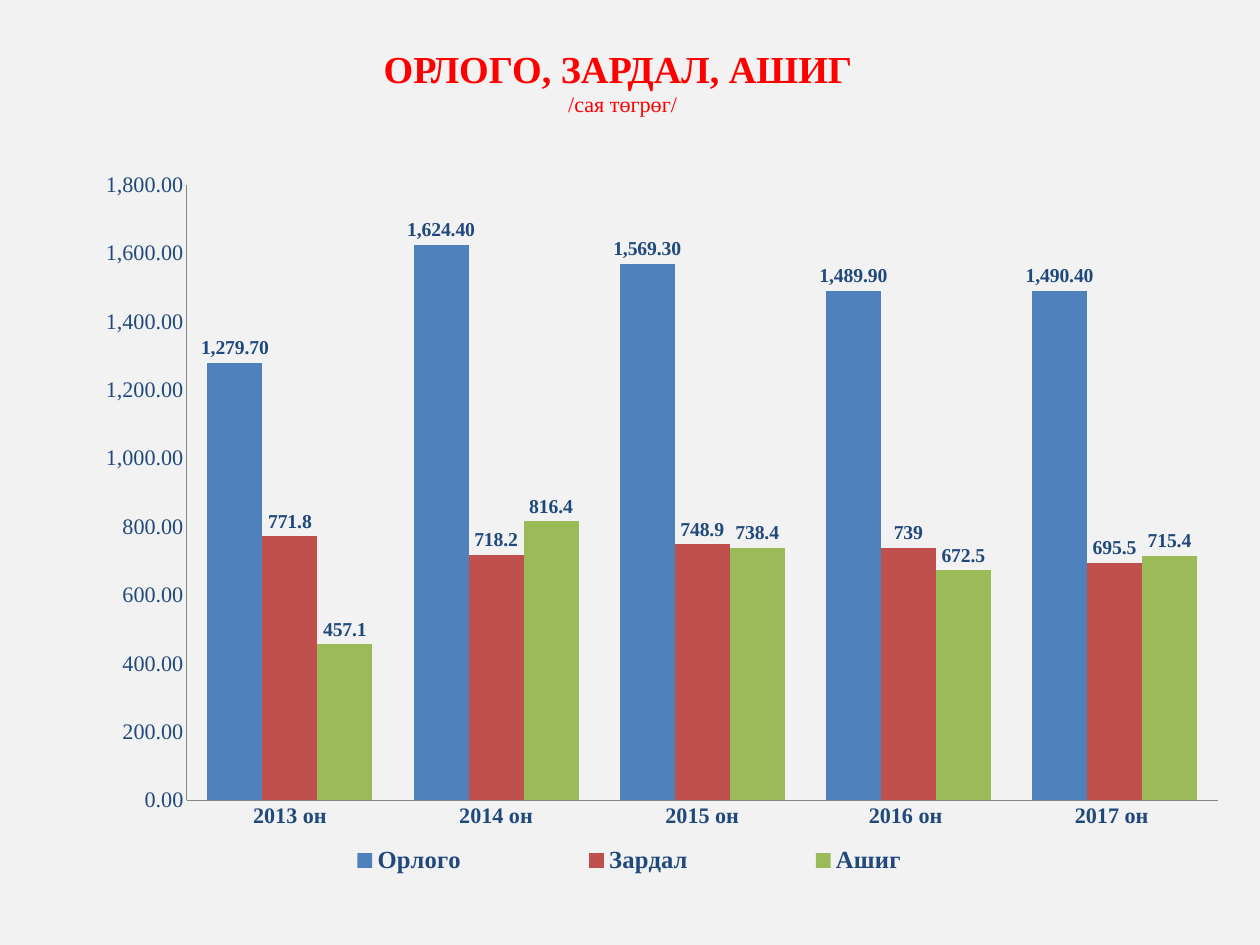
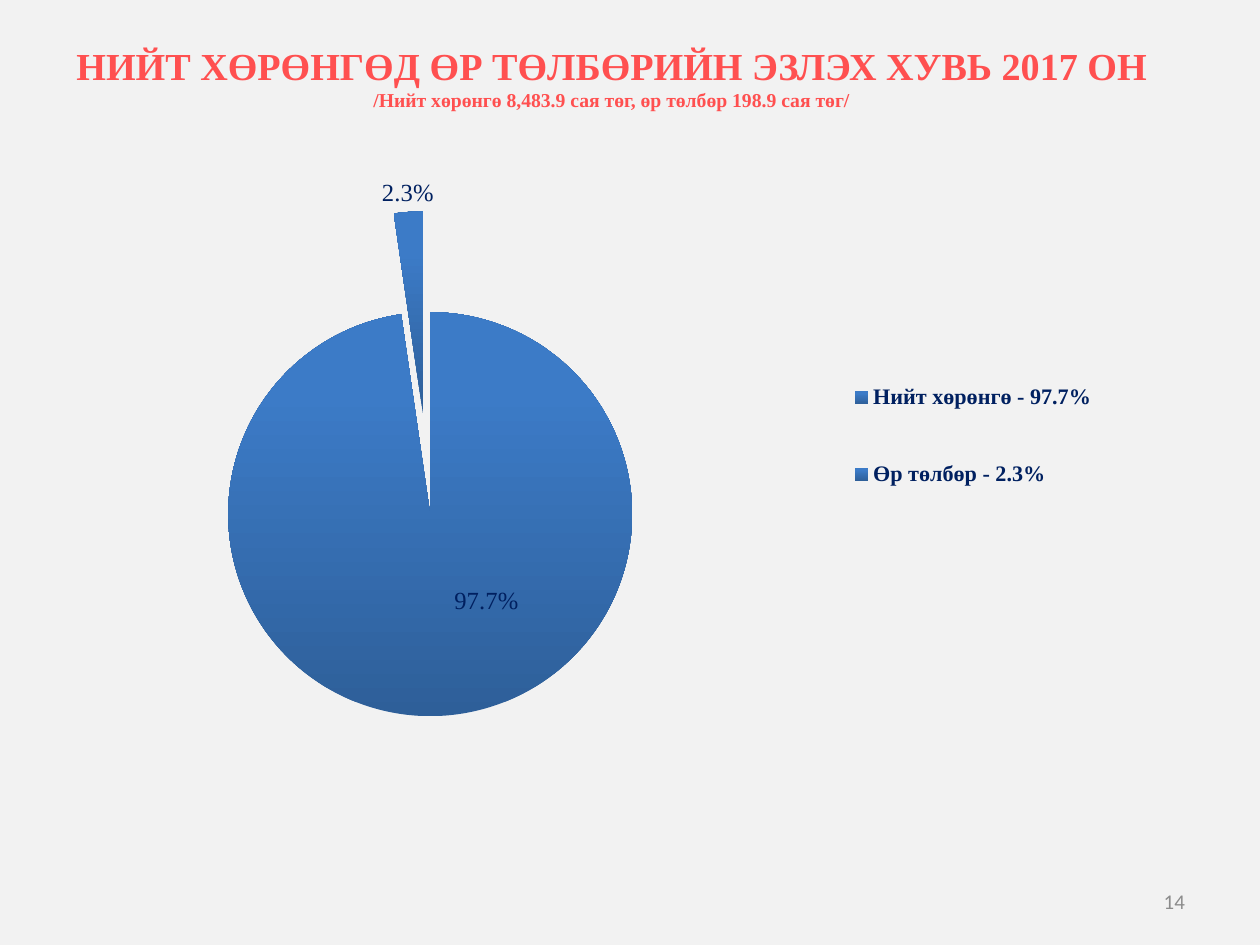
from lxml import etree
from pptx import Presentation
from pptx.chart.data import CategoryChartData
from pptx.dml.color import RGBColor
from pptx.enum.chart import (XL_CHART_TYPE, XL_LABEL_POSITION,
                             XL_LEGEND_POSITION, XL_TICK_MARK)
from pptx.enum.text import MSO_ANCHOR, PP_ALIGN
from pptx.oxml.ns import qn
from pptx.util import Pt

COLUMN, PIE = XL_CHART_TYPE.COLUMN_CLUSTERED, XL_CHART_TYPE.PIE
CENTER, OUTSIDE = XL_LABEL_POSITION.CENTER, XL_LABEL_POSITION.OUTSIDE_END
BOTTOM, RIGHT = XL_LEGEND_POSITION.BOTTOM, XL_LEGEND_POSITION.RIGHT
NO_TICK = XL_TICK_MARK.NONE
MIDDLE = MSO_ANCHOR.MIDDLE
MID, END = PP_ALIGN.CENTER, PP_ALIGN.RIGHT

PAPER = RGBColor(0xF2, 0xF2, 0xF2)
RED = RGBColor(0xFF, 0x00, 0x00)
CORAL = RGBColor(0xFF, 0x50, 0x50)
GRAY = RGBColor(0x8C, 0x8C, 0x8C)
AXIS = RGBColor(0x86, 0x86, 0x86)
INK = RGBColor(0x1F, 0x49, 0x7D)
NAVY = RGBColor(0x00, 0x20, 0x60)
BLUE = RGBColor(0x4F, 0x81, 0xBD)
BRICK = RGBColor(0xC0, 0x50, 0x4D)
GREEN = RGBColor(0x9B, 0xBB, 0x59)
DEEP = RGBColor(0x2E, 0x5F, 0x99)
BRIGHT = RGBColor(0x3C, 0x7B, 0xC7)

SERIF, SANS = "Times New Roman", "Calibri"
MONEY = "#,##0.00"

YEARS = ["2013 он", "2014 он", "2015 он", "2016 он ", "2017 он "]
SUMS = [
    ("Орлого", [1279.7, 1624.4, 1569.3, 1489.9, 1490.4], BLUE, MONEY),
    ("Зардал", [771.8, 718.2, 748.9, 739, 695.5], BRICK, "General"),
    ("Ашиг", [457.1, 816.4, 738.4, 672.5, 715.4], GREEN, "General"),
]
SHARES = {"Нийт хөрөнгө - 97.7%": 0.977, "Өр төлбөр - 2.3%": 0.023}


def style(font, color, size, bold=False, name=SERIF):
    font.color.rgb = color
    look = {"size": Pt(size), "bold": bold, "name": name}
    for key, value in look.items():
        setattr(font, key, value)


def add_text(slide, box, lines, color, align=MID, name=SERIF):
    """Fill a text box with lines of (text, size, bold)."""
    frame = slide.shapes.add_textbox(*map(Pt, box)).text_frame
    look = {"word_wrap": True, "vertical_anchor": MIDDLE,
            "margin_left": Pt(10), "margin_right": Pt(10),
            "margin_top": Pt(5), "margin_bottom": Pt(5)}
    for key, value in look.items():
        setattr(frame, key, value)
    for i, (text, size, bold) in enumerate(lines):
        para = frame.add_paragraph() if i else frame.paragraphs[0]
        para.alignment = align
        run = para.add_run()
        run.text = text
        style(run.font, color, size, bold, name)


def add_slide(deck):
    slide = deck.slides.add_slide(deck.slide_layouts[6])
    fill = slide.background.fill
    fill.solid()
    fill.fore_color.rgb = PAPER
    return slide


def set_layout(host, before, **values):
    """Give a chart part a manual layout, placed ahead of the named child."""
    for old in host.findall(qn("c:layout")):
        host.remove(old)
    layout = etree.Element(qn("c:layout"))
    manual = etree.SubElement(layout, qn("c:manualLayout"))
    for tag, value in values.items():
        etree.SubElement(manual, qn("c:" + tag)).set("val", str(value))
    host.find(qn("c:" + before)).addprevious(layout)


def frame_layout(x, y, w, h):
    return dict(xMode="edge", yMode="edge", x=x, y=y, w=w, h=h)


def add_chart(slide, kind, box, data, plot, key, spot, color, size):
    """Add a chart with plot and legend boxes given as shares of it."""
    chart = slide.shapes.add_chart(kind, *map(Pt, box), data).chart
    chart.has_title = False
    style(chart.font, color, 18)
    chart.has_legend = True
    legend = chart.legend
    legend.position = spot
    legend.include_in_layout = False
    style(legend.font, color, size, True)
    area = chart.plots[0]._element
    set_layout(area.getparent(), etree.QName(area).localname,
               layoutTarget="inner", **frame_layout(*plot))
    set_layout(legend._element, "overlay", **frame_layout(*key))
    return chart


def add_bars(slide, box):
    data = CategoryChartData()
    data.categories = YEARS
    for name, values, _, form in SUMS:
        data.add_series(name, values, form)
    chart = add_chart(slide, COLUMN, box, data, (0.096, 0.031, 0.895, 0.851),
                      (0.14, 0.93, 0.68, 0.07), BOTTOM, INK, 20)
    plot = chart.plots[0]
    plot.gap_width, plot.overlap = 75, 0
    plot.vary_by_categories = False
    for axis, bold in ((chart.category_axis, True), (chart.value_axis, False)):
        axis.has_major_gridlines = False
        axis.major_tick_mark = axis.minor_tick_mark = NO_TICK
        axis.format.line.color.rgb = AXIS
        style(axis.tick_labels.font, INK, 18, bold)
    marks = chart.value_axis.tick_labels
    marks.number_format, marks.number_format_is_linked = MONEY, False
    for series, (_, _, color, form) in zip(plot.series, SUMS):
        series.format.fill.solid()
        series.format.fill.fore_color.rgb = color
        series.invert_if_negative = False
        labels = series.data_labels
        labels.show_value = True
        labels.position = OUTSIDE
        labels.number_format, labels.number_format_is_linked = form, False
        style(labels.font, INK, 16, True)


def shade(point):
    fill = point.format.fill
    fill.gradient()
    fill.gradient_angle = 90
    for stop, color, place in zip(fill.gradient_stops, (DEEP, BRIGHT), (0, 0.8)):
        stop.color.rgb, stop.position = color, place


def add_pie(slide, box):
    data = CategoryChartData(number_format="0.0%")
    data.categories = list(SHARES)
    data.add_series("Series 1", list(SHARES.values()))
    chart = add_chart(slide, PIE, box, data, (0, 0.107, 0.668, 0.76),
                      (0.66, 0.29, 0.24, 0.31), RIGHT, NAVY, 18)
    plot = chart.plots[0]
    plot.vary_by_categories = True
    series = plot.series[0]
    labels = series.data_labels
    labels.show_value = True
    labels.number_format, labels.number_format_is_linked = "0.0%", False
    style(labels.font, NAVY, 20)
    for i, spot in enumerate((CENTER, OUTSIDE)):
        point = series.points[i]
        shade(point)
        label = point.data_label
        style(label.font, NAVY, 20)
        label.position = spot
    burst = etree.Element(qn("c:explosion"), val="25")
    series._element.find(qn("c:dPt")).addprevious(burst)
    for tag in series._element.iter(qn("c:dLbl")):
        if tag.find(qn("c:idx")).get("val") == "0":
            set_layout(tag, "spPr" if tag.find(qn("c:spPr")) is not None
                       else "txPr", x=0.04, y=-0.02)


def main():
    deck = Presentation()
    deck.slide_width, deck.slide_height = Pt(1024), Pt(768)

    sums = add_slide(deck)
    add_text(sums, (32, 30, 948, 72),
             [("ОРЛОГО, ЗАРДАЛ, АШИГ ", 31, True), ("/сая төгрөг/", 18, False)],
             RED)
    add_bars(sums, (62, 132, 936, 588))

    debt = add_slide(deck)
    add_text(debt, (734, 712, 239, 41), [("14", 17, False)], GRAY, END, SANS)
    add_pie(debt, (14, 114, 996, 540))
    add_text(debt, (32, 23, 930, 79),
             [("НИЙТ ХӨРӨНГӨД ӨР ТӨЛБӨРИЙН ЭЗЛЭХ ХУВЬ 2017 ОН", 31, True),
              ("/Нийт хөрөнгө 8,483.9 сая төг, өр төлбөр 198.9 сая төг/", 16, True)],
             CORAL)
    deck.save("out.pptx")


if __name__ == "__main__":
    main()
